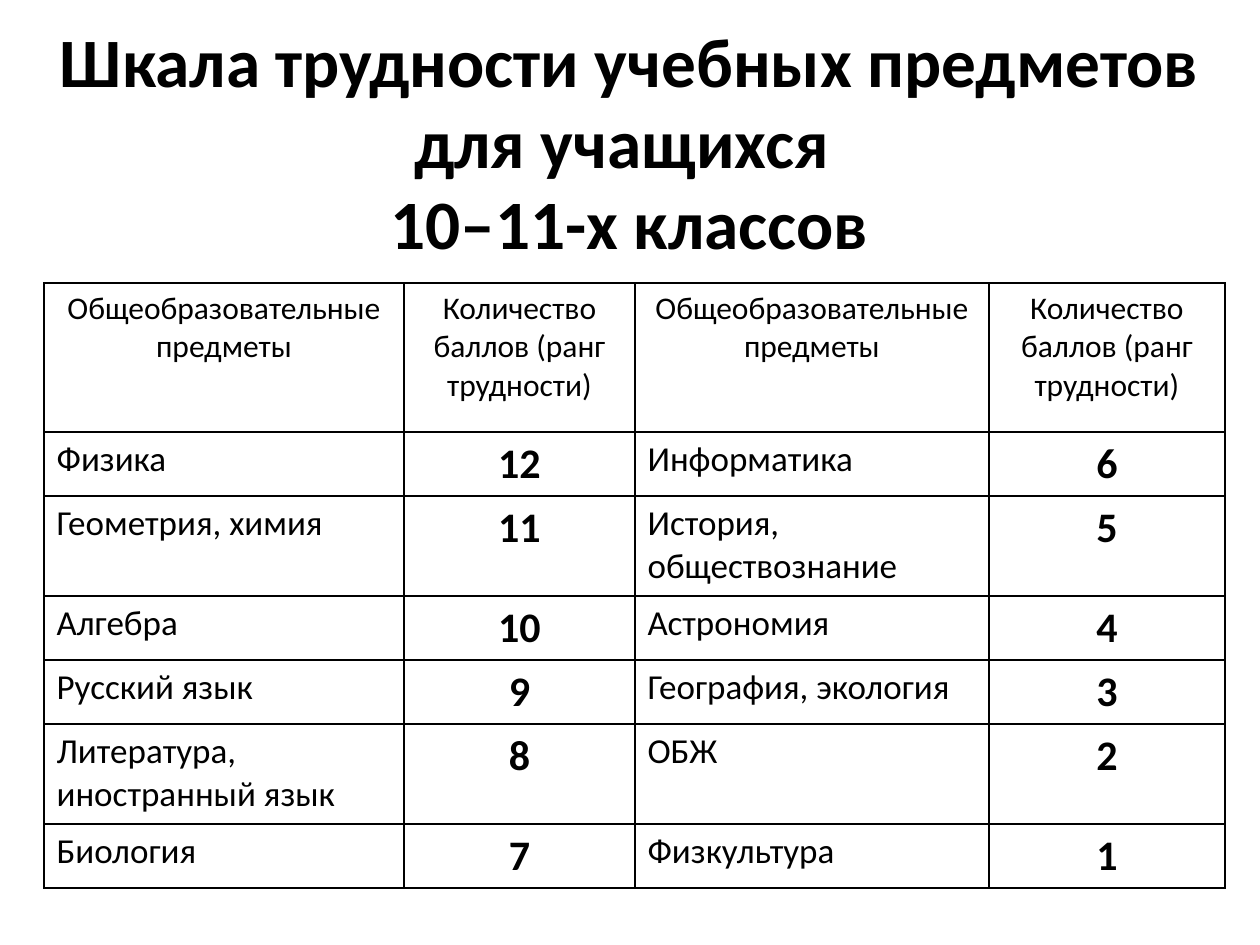
from dataclasses import dataclass

from lxml import etree
from pptx import Presentation
from pptx.dml.color import RGBColor
from pptx.enum.text import MSO_ANCHOR, PP_ALIGN
from pptx.oxml.ns import qn
from pptx.util import Pt

EMU_PER_PX = 914400 / 126
LEFT, CENTER = PP_ALIGN.LEFT, PP_ALIGN.CENTER
MIDDLE = MSO_ANCHOR.MIDDLE
TITLE_ONLY = 5


@dataclass(frozen=True)
class Theme:
    font: str = "Calibri"
    ink: str = "000000"
    paper: str = "FFFFFF"
    title_size: float = 39.6
    heading_size: int = 18
    subject_size: int = 20
    score_size: int = 24
    border_width: int = 1


THEME = Theme()
SLIDE_SIZE = (1260, 945)
TITLE_BOX = (44, 16, 1171, 256)
TABLE_BOX = (44, 283, 1181, 605)
COLUMN_WIDTHS = (360, 231, 354, 236)
HEADING_HEIGHT, SINGLE_HEIGHT, DOUBLE_HEIGHT = 149, 64, 100
TALL_ROWS = (2, 5)

TITLE = "Шкала трудности учебных предметов для учащихся \v10–11-х классов"
HEADINGS = ("Общеобразовательные предметы", "Количество баллов (ранг трудности)")
SUBJECTS = (
    ("Физика", "Информатика"),
    ("Геометрия, химия", "История, обществознание"),
    ("Алгебра", "Астрономия"),
    ("Русский язык", "География, экология"),
    ("Литература, иностранный язык", "ОБЖ"),
    ("Биология", "Физкультура"),
)
TOP_SCORE = 12


def px(length):
    return round(length * EMU_PER_PX)


def write(text_frame, text, size, bold, alignment):
    text_frame.text = text
    for paragraph in text_frame.paragraphs:
        paragraph.alignment = alignment
        for run in paragraph.runs:
            run.font.name = THEME.font
            run.font.size = Pt(size)
            run.font.bold = bold
            run.font.color.rgb = RGBColor.from_string(THEME.ink)


def add_borders(cell):
    properties = cell._tc.get_or_add_tcPr()
    for side in ("a:lnL", "a:lnR", "a:lnT", "a:lnB"):
        border = etree.SubElement(properties, qn(side), w=str(Pt(THEME.border_width)))
        fill = etree.SubElement(border, qn("a:solidFill"))
        etree.SubElement(fill, qn("a:srgbClr"), val=THEME.ink)


def place_title(slide, box):
    title = slide.shapes.title
    title.left, title.top, title.width, title.height = map(px, box)
    title.text_frame.word_wrap = True
    title.text_frame.vertical_anchor = MIDDLE
    write(title.text_frame, TITLE, THEME.title_size, True, CENTER)
    title.text_frame.paragraphs[0].line_spacing = 0.98


def score_rows():
    count = len(SUBJECTS)
    for index, (harder, easier) in enumerate(SUBJECTS):
        score = TOP_SCORE - index
        yield harder, str(score), easier, str(score - count)


def place_scale(slide, box):
    rows = [HEADINGS * 2, *score_rows()]
    scale = slide.shapes.add_table(len(rows), len(COLUMN_WIDTHS), *map(px, box)).table
    scale.first_row = False
    scale.horz_banding = False
    for column, width in zip(scale.columns, COLUMN_WIDTHS):
        column.width = px(width)
    for row_index, texts in enumerate(rows):
        is_heading = row_index == 0
        height = DOUBLE_HEIGHT if row_index in TALL_ROWS else SINGLE_HEIGHT
        scale.rows[row_index].height = px(HEADING_HEIGHT if is_heading else height)
        for column_index, text in enumerate(texts):
            cell = scale.cell(row_index, column_index)
            if is_heading:
                style = (THEME.heading_size, False, CENTER)
            elif column_index % 2:
                style = (THEME.score_size, True, CENTER)
            else:
                style = (THEME.subject_size, False, LEFT)
            write(cell.text_frame, text, *style)
            add_borders(cell)
            cell.fill.solid()
            cell.fill.fore_color.rgb = RGBColor.from_string(THEME.paper)


def main():
    presentation = Presentation()
    presentation.slide_width, presentation.slide_height = map(px, SLIDE_SIZE)
    slide = presentation.slides.add_slide(presentation.slide_layouts[TITLE_ONLY])
    place_title(slide, TITLE_BOX)
    place_scale(slide, TABLE_BOX)
    presentation.save("out.pptx")


if __name__ == "__main__":
    main()
